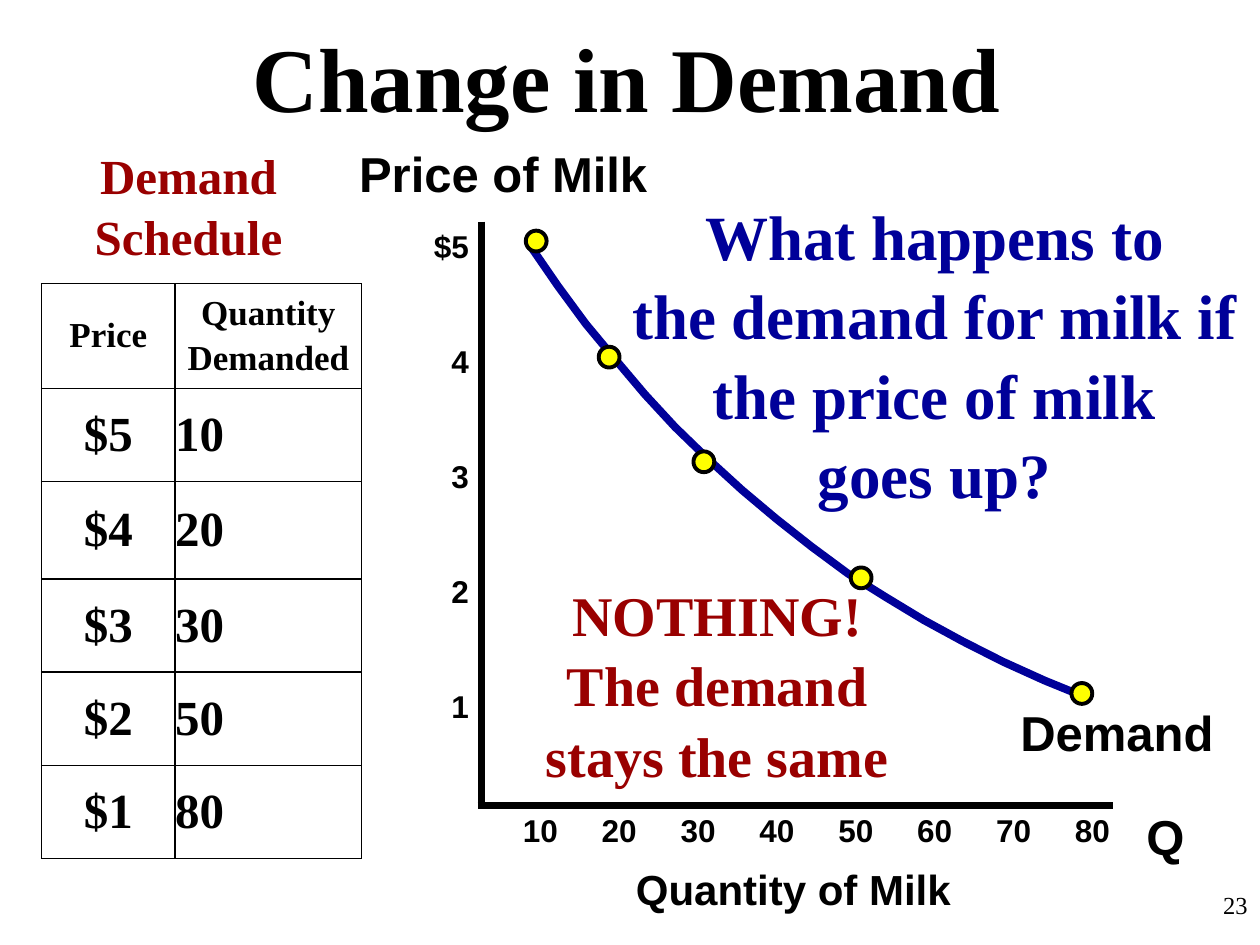
from dataclasses import dataclass
from typing import NamedTuple

from lxml.etree import SubElement
from pptx import Presentation
from pptx.dml.color import RGBColor
from pptx.enum.shapes import MSO_CONNECTOR, MSO_SHAPE
from pptx.enum.text import MSO_ANCHOR, PP_ALIGN
from pptx.oxml.ns import qn
from pptx.util import Cm, Pt

COLORS = {
    "ink": "000000",
    "paper": "FFFFFF",
    "red": "990000",
    "blue": "000099",
    "yellow": "FFFF00",
}
SERIF = "Times New Roman"
SANS = "Arial"


class Point(NamedTuple):
    x: float
    y: float


@dataclass
class Label:
    lines: list[str]
    left: float
    top: float
    width: float
    height: float
    size: float
    font: str = SANS
    color: str = "ink"
    align: PP_ALIGN = PP_ALIGN.LEFT
    anchor: MSO_ANCHOR = MSO_ANCHOR.TOP
    bold: bool = True
    gap: float = 0
    tab_step: float = 0


@dataclass
class Axis:
    start: Point
    end: Point


QUANTITIES = [str(quantity) for quantity in range(10, 90, 10)]
LABELS = [
    Label(["Q"], 22.86, 16.08, 1.27, 1.45, 28),
    Label(["$5", "4", "3", "2", "1"], 8.2, 4.42, 1.5, 10.19, 18, align=PP_ALIGN.RIGHT, gap=43),
    Label(["Price of Milk"], 6.99, 2.74, 6.4, 1.45, 28, anchor=MSO_ANCHOR.MIDDLE),
    Label(["Quantity of Milk"], 12.57, 17.25, 6.91, 1.3, 24, anchor=MSO_ANCHOR.MIDDLE),
    Label(["Demand Schedule"], 0.84, 2.74, 5.92, 2.62, 28, SERIF, "red", PP_ALIGN.CENTER),
    Label(["\t".join(QUANTITIES)], 10.29, 16.18, 12.57, 1.02, 18, tab_step=1.59),
    Label(["23"], 20.12, 17.78, 5.28, 1.27, 14, SERIF, align=PP_ALIGN.RIGHT, bold=False),
    Label(["Demand"], 20.32, 13.97, 4.78, 1.45, 28),
    Label(
        ["What happens to", "the demand for milk if", "the price of milk", "goes up?"],
        12.27, 3.78, 13.13, 6.4, 36, SERIF, "blue", PP_ALIGN.CENTER,
    ),
    Label(
        ["NOTHING!", "The demand stays the same"],
        10.08, 11.51, 8.76, 4.37, 32, SERIF, "red", PP_ALIGN.CENTER,
    ),
]
AXES = [
    Axis(Point(9.7, 4.47), Point(9.7, 16.31)),
    Axis(Point(9.63, 16.23), Point(22.43, 16.23)),
]
CURVE = [
    Point(10.72, 5), Point(11.25, 5.77), Point(11.81, 6.53), Point(12.4, 7.24),
    Point(13, 7.95), Point(13.61, 8.61), Point(14.27, 9.25), Point(14.96, 9.88),
    Point(15.65, 10.46), Point(16.36, 11.02), Point(17.09, 11.56), Point(17.86, 12.04),
    Point(18.62, 12.5), Point(19.41, 12.93), Point(20.22, 13.34), Point(21.06, 13.72),
    Point(21.87, 14.05),
]
MARKERS = [
    Point(10.81, 4.86), Point(12.28, 7.2), Point(14.19, 9.31),
    Point(17.36, 11.65), Point(21.81, 13.98),
]
MARKER_SIZE = 0.42
SCHEDULE = [
    ("Price", "Quantity\nDemanded"),
    ("$5", "10"), ("$4", "20"), ("$3", "30"), ("$2", "50"), ("$1", "80"),
]
COLUMN_WIDTHS = [2.69, 3.76]
ROW_HEIGHTS = [2.11, 1.88, 1.96, 1.88, 1.88, 1.88]


def rgb(name: str) -> RGBColor:
    return RGBColor.from_string(COLORS[name])


def style_paragraph(paragraph, size: float, font: str, color: str, align: PP_ALIGN, bold: bool = True) -> None:
    paragraph.alignment = align
    paragraph.font.size = Pt(size)
    paragraph.font.name = font
    paragraph.font.bold = bold
    paragraph.font.color.rgb = rgb(color)


def style_line(line, color: str, width: float) -> None:
    line.color.rgb = rgb(color)
    line.width = Pt(width)


def add_title(slide, text: str) -> None:
    title = slide.shapes.title
    title.left, title.top, title.width, title.height = Cm(0.64), Cm(0.33), Cm(23.98), Cm(2.39)
    title.text_frame.text = text
    title.text_frame.vertical_anchor = MSO_ANCHOR.MIDDLE
    style_paragraph(title.text_frame.paragraphs[0], 52, SERIF, "ink", PP_ALIGN.CENTER)


def add_tab_stops(paragraph, step: float, count: int) -> None:
    tab_list = SubElement(paragraph._p.get_or_add_pPr(), qn("a:tabLst"))
    for index in range(1, count + 1):
        SubElement(tab_list, qn("a:tab"), pos=str(Cm(step * index)), algn="l")


def add_label(slide, label: Label) -> None:
    box = slide.shapes.add_textbox(Cm(label.left), Cm(label.top), Cm(label.width), Cm(label.height))
    frame = box.text_frame
    frame.word_wrap = True
    frame.vertical_anchor = label.anchor
    frame.text = "\n".join(label.lines)
    for index, paragraph in enumerate(frame.paragraphs):
        paragraph.line_spacing = 1.05
        if index and label.gap:
            paragraph.space_before = Pt(label.gap)
        if label.tab_step:
            add_tab_stops(paragraph, label.tab_step, paragraph.text.count("\t"))
        style_paragraph(paragraph, label.size, label.font, label.color, label.align, label.bold)


def add_axis(slide, axis: Axis) -> None:
    connector = slide.shapes.add_connector(
        MSO_CONNECTOR.STRAIGHT, Cm(axis.start.x), Cm(axis.start.y), Cm(axis.end.x), Cm(axis.end.y)
    )
    style_line(connector.line, "ink", 4)
    SubElement(connector._element.spPr, qn("a:effectLst"))


def add_curve(slide, points: list[Point]) -> None:
    start, *others = [(Cm(point.x), Cm(point.y)) for point in points]
    builder = slide.shapes.build_freeform(*start)
    builder.add_line_segments(others, close=False)
    curve = builder.convert_to_shape()
    curve.shadow.inherit = False
    curve.fill.background()
    style_line(curve.line, "blue", 4.5)


def add_marker(slide, center: Point) -> None:
    radius = MARKER_SIZE / 2
    marker = slide.shapes.add_shape(
        MSO_SHAPE.OVAL, Cm(center.x - radius), Cm(center.y - radius), Cm(MARKER_SIZE), Cm(MARKER_SIZE)
    )
    marker.shadow.inherit = False
    marker.fill.solid()
    marker.fill.fore_color.rgb = rgb("yellow")
    style_line(marker.line, "ink", 2.25)


def add_borders(cell) -> None:
    properties = cell._tc.get_or_add_tcPr()
    for side in ("lnL", "lnR", "lnT", "lnB"):
        border = SubElement(properties, qn(f"a:{side}"), w=str(Pt(1)))
        fill = SubElement(border, qn("a:solidFill"))
        SubElement(fill, qn("a:srgbClr"), val=COLORS["ink"])


def fill_cell(cell, text: str, size: float, align: PP_ALIGN) -> None:
    cell.margin_left = cell.margin_right = cell.margin_top = cell.margin_bottom = 0
    cell.vertical_anchor = MSO_ANCHOR.MIDDLE
    cell.text = text
    for index, paragraph in enumerate(cell.text_frame.paragraphs):
        if index:
            paragraph.space_before = Pt(4)
        style_paragraph(paragraph, size, SERIF, "ink", align)
    add_borders(cell)
    cell.fill.solid()
    cell.fill.fore_color.rgb = rgb("paper")


def add_schedule(slide) -> None:
    table = slide.shapes.add_table(
        len(SCHEDULE), len(COLUMN_WIDTHS), Cm(0.84), Cm(5.72), Cm(sum(COLUMN_WIDTHS)), Cm(sum(ROW_HEIGHTS))
    ).table
    for column, width in zip(table.columns, COLUMN_WIDTHS):
        column.width = Cm(width)
    for row_index, (height, texts) in enumerate(zip(ROW_HEIGHTS, SCHEDULE)):
        table.rows[row_index].height = Cm(height)
        for column_index, text in enumerate(texts):
            is_quantity = row_index > 0 and column_index == 1
            align = PP_ALIGN.LEFT if is_quantity else PP_ALIGN.CENTER
            fill_cell(table.cell(row_index, column_index), text, 28 if row_index else 20, align)


def main() -> None:
    presentation = Presentation()
    presentation.slide_width, presentation.slide_height = Cm(25.4), Cm(19.05)
    slide = presentation.slides.add_slide(presentation.slide_layouts[5])
    add_title(slide, "Change in Demand")
    for axis in AXES:
        add_axis(slide, axis)
    add_schedule(slide)
    add_curve(slide, CURVE)
    for center in MARKERS:
        add_marker(slide, center)
    for label in LABELS:
        add_label(slide, label)
    presentation.save("out.pptx")


if __name__ == "__main__":
    main()
